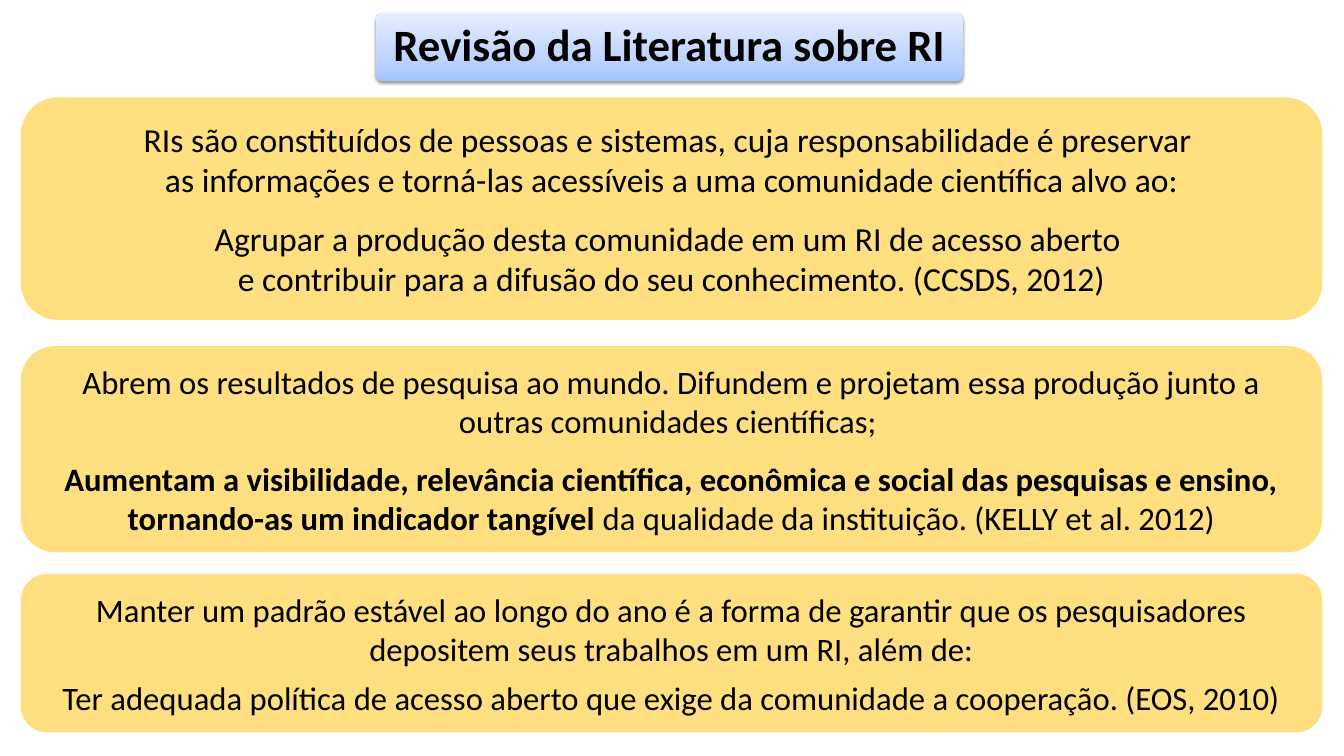
"""Build the literature review slide: a gradient title above three text panels."""
from copy import deepcopy

from lxml.etree import SubElement
from pptx import Presentation
from pptx.dml.color import RGBColor
from pptx.enum.shapes import MSO_SHAPE
from pptx.enum.text import MSO_ANCHOR, PP_ALIGN
from pptx.oxml.ns import qn
from pptx.util import Pt

BLACK = RGBColor(0x00, 0x00, 0x00)
AMBER = RGBColor(0xFF, 0xC0, 0x00)
TITLE_STOPS = [
    (0, RGBColor(0xA4, 0xC4, 0xFF)),
    (0.35, RGBColor(0xBF, 0xD4, 0xFF)),
    (1, RGBColor(0xE6, 0xEE, 0xFF)),
]
FONT = "Calibri"
PANEL_LEFT, PANEL_WIDTH = 22.3, 1394.6

TITLE = "Revisão da Literatura sobre RI"
PANELS = [
    dict(top=104.4, height=238.3, size=36, paragraphs=[
        dict(text="RIs são constituídos de pessoas e sistemas, cuja responsabilidade é preservar \n"
                  "as informações e torná-las acessíveis a uma comunidade científica alvo ao:"),
        dict(text="Agrupar a produção desta comunidade em um RI de acesso aberto \n"
                  "e contribuir para a difusão do seu conhecimento. (CCSDS, 2012)"),
    ]),
    dict(top=370.8, height=221, size=35, paragraphs=[
        dict(text="Abrem os resultados de pesquisa ao mundo. Difundem e projetam essa produção "
                  "junto a outras comunidades científicas; "),
        dict(lead="Aumentam a visibilidade, relevância científica, econômica e social das "
                  "pesquisas e ensino, tornando-as um indicador tangível ",
             text="da qualidade da instituição. (KELLY et al. 2012)"),
    ]),
    dict(top=614.9, height=169.9, size=35, paragraphs=[
        dict(text="Manter um padrão estável ao longo do ano é a forma de garantir que os "
                  "pesquisadores depositem seus trabalhos em um RI, além de:"),
        dict(text="Ter adequada política de acesso aberto que exige da comunidade a "
                  "cooperação. (EOS, 2010)", space=0),
    ]),
]


def add_box(s, left, top, width, height):
    sp = s.shapes.add_shape(MSO_SHAPE.ROUNDED_RECTANGLE,
                            Pt(left), Pt(top), Pt(width), Pt(height))
    sp.shadow.inherit = False
    sp.line.fill.background()
    sp.text_frame.vertical_anchor = MSO_ANCHOR.MIDDLE
    sp.text_frame.word_wrap = True
    return sp


def add_text(p, text, *, size, bold=False):
    p.alignment = PP_ALIGN.CENTER
    for i, line in enumerate(text.split("\n")):
        if i:
            p.add_line_break()
        r = p.add_run()
        r.text = line
        r.font.name, r.font.size, r.font.bold = FONT, Pt(size), bold
        r.font.color.rgb = BLACK


def set_alpha(color, percent):
    SubElement(color, qn("a:alpha"), val=str(percent * 1000))


def add_title(s):
    sp = add_box(s, 402.5, 13.7, 629.3, 73.4)
    sp.adjustments[0] = 0.1
    sp.fill.gradient()
    sp.fill.gradient_angle = 90
    spPr = sp._element.spPr
    stops = spPr.find(".//" + qn("a:gsLst"))
    stops.append(deepcopy(stops[-1]))
    for stop, (position, color) in zip(sp.fill.gradient_stops, TITLE_STOPS):
        stop.position = position
        stop.color.rgb = color
    shadow = SubElement(spPr.find(qn("a:effectLst")), qn("a:outerShdw"),
                        blurRad=str(Pt(3.1)), dist=str(Pt(1.6)), dir="5400000", rotWithShape="0")
    set_alpha(SubElement(shadow, qn("a:srgbClr"), val=str(BLACK)), 38)
    tf = sp.text_frame
    tf.word_wrap = False
    p = tf.paragraphs[0]
    p.line_spacing = 0.9
    add_text(p, TITLE, size=48, bold=True)


def add_panel(s, top, height, size, paragraphs):
    sp = add_box(s, PANEL_LEFT, top, PANEL_WIDTH, height)
    sp.fill.solid()
    sp.fill.fore_color.rgb = AMBER
    set_alpha(sp._element.spPr.find(qn("a:solidFill"))[0], 50)
    tf = sp.text_frame
    for i, item in enumerate(paragraphs):
        p = tf.add_paragraph() if i else tf.paragraphs[0]
        p.space_before = p.space_after = Pt(item.get("space", 10))
        if "lead" in item:
            add_text(p, item["lead"], size=size, bold=True)
        add_text(p, item["text"], size=size)


def main():
    prs = Presentation()
    prs.slide_width, prs.slide_height = Pt(1440), Pt(810)
    s = prs.slides.add_slide(prs.slide_layouts[6])
    add_title(s)
    for panel in PANELS:
        add_panel(s, **panel)
    prs.save("out.pptx")


if __name__ == "__main__":
    main()
